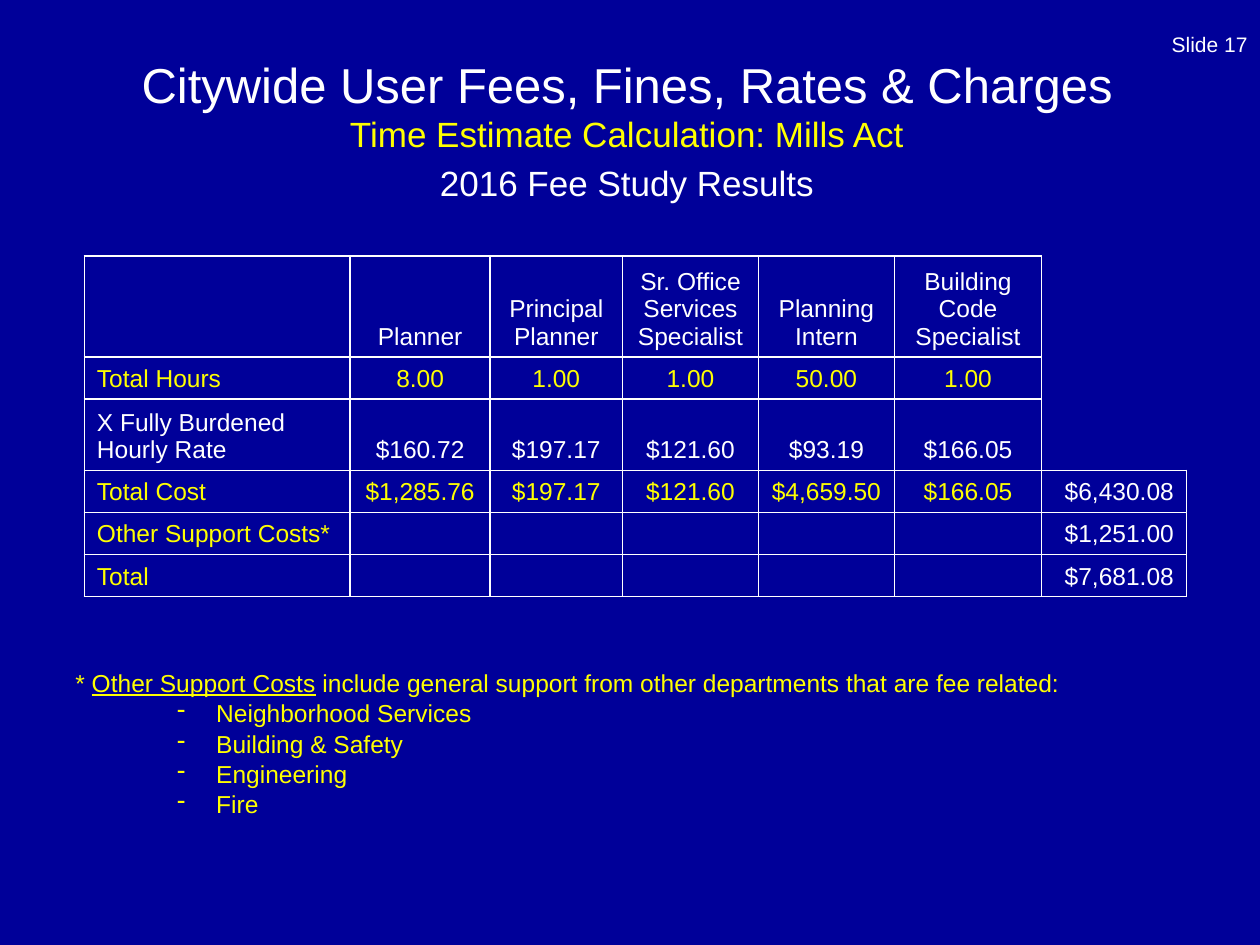
import pptx
import pptx.util
import pptx.dml.color
import pptx.enum.text
import pptx.oxml
import pptx.oxml.ns
import lxml.etree

Cm, Pt = pptx.util.Cm, pptx.util.Pt
ALIGN = pptx.enum.text.PP_ALIGN
ANCHOR = pptx.enum.text.MSO_ANCHOR
qn = pptx.oxml.ns.qn

COLORS = {"back": "000099", "white": "FFFFFF", "yellow": "FFFF00"}
FACE = "Arial"
NO_STYLE = "{2D5ABB26-0587-4C30-8999-92F81FD0307C}"

NUMBER = "Slide 17"
TITLE = "Citywide User Fees, Fines, Rates & Charges"
TOPIC = "Time Estimate Calculation: Mills Act"
STUDY = "2016 Fee Study Results"

# Row height in cm, text colour, cells
ROWS = [
    (1.93, "white", ["", "Planner", "Principal Planner",
                     "Sr. Office Services Specialist", "Planning Intern",
                     "Building Code Specialist", ""]),
    (0.84, "yellow", ["Total Hours", "8.00", "1.00", "1.00", "50.00", "1.00", ""]),
    (1.37, "white", ["X Fully Burdened Hourly Rate", "$160.72", "$197.17",
                     "$121.60", "$93.19", "$166.05", ""]),
    (0.84, "yellow", ["Total Cost", "$1,285.76", "$197.17", "$121.60",
                      "$4,659.50", "$166.05", "$6,430.08"]),
    (0.84, "yellow", ["Other Support Costs*", "", "", "", "", "", "$1,251.00"]),
    (0.84, "yellow", ["Total", "", "", "", "", "", "$7,681.08"]),
]
WIDTHS = [5.36, 2.82, 2.67, 2.74, 2.74, 2.97, 2.92]
OPEN_ROWS = 3  # rows whose last cell stays outside the grid

NOTE = [("* ", False), ("Other Support Costs", True),
        (" include general support from other departments that are fee related:", False)]
UNITS = ["Neighborhood Services", "Building & Safety", "Engineering", "Fire"]


def style(font, size, color):
    font.name = FACE
    font.size = Pt(size)
    font.color.rgb = pptx.dml.color.RGBColor.from_string(COLORS[color])


def add_box(slide, left, top, width, height):
    box = slide.shapes.add_textbox(Cm(left), Cm(top), Cm(width), Cm(height))
    box.text_frame.word_wrap = True
    return box.text_frame


def add_head(slide):
    frame = add_box(slide, 19.48, 0, 5.92, 1.27)
    frame.vertical_anchor = ANCHOR.BOTTOM
    para = frame.paragraphs[0]
    para.text = NUMBER
    para.alignment = ALIGN.RIGHT
    style(para.font, 12, "white")

    frame = add_box(slide, 0.79, 0.84, 23.7, 2.11)
    frame.margin_top = Cm(0.25)
    para = frame.paragraphs[0]
    para.alignment = ALIGN.CENTER
    run = para.add_run()
    run.text = TITLE
    style(run.font, 28, "white")
    para.add_line_break()
    run = para.add_run()
    run.text = TOPIC
    style(run.font, 20, "yellow")
    para = frame.add_paragraph()
    para.text = STUDY
    para.alignment = ALIGN.CENTER
    para.space_before = Pt(4)
    style(para.font, 20, "white")


def set_edges(cell, sides):
    """Draw a white line on the given sides (L, R, T, B) and none elsewhere."""
    props = cell._tc.get_or_add_tcPr()
    for side in "LRTB":
        line = lxml.etree.SubElement(props, qn("a:ln" + side), w=str(Pt(1)))
        if side in sides:
            fill = lxml.etree.SubElement(line, qn("a:solidFill"))
            lxml.etree.SubElement(fill, qn("a:srgbClr"), val=COLORS["white"])
        else:
            lxml.etree.SubElement(line, qn("a:noFill"))


def add_costs(slide):
    last = len(WIDTHS) - 1
    high = sum(row[0] for row in ROWS)
    table = slide.shapes.add_table(len(ROWS), len(WIDTHS), Cm(1.7), Cm(5.16),
                                   Cm(sum(WIDTHS)), Cm(high)).table
    table.first_row = table.horz_banding = False
    table._tbl.tblPr.find(qn("a:tableStyleId")).text = NO_STYLE
    for col, width in zip(table.columns, WIDTHS):
        col.width = Cm(width)
    for r, (height, color, texts) in enumerate(ROWS):
        table.rows[r].height = Cm(height)
        for c, text in enumerate(texts):
            cell = table.cell(r, c)
            sides = "LRTB"
            if c == last and r < OPEN_ROWS:
                sides = "LB" if r == OPEN_ROWS - 1 else "L"
            set_edges(cell, sides)
            cell.fill.background()
            cell.vertical_anchor = ANCHOR.BOTTOM
            para = cell.text_frame.paragraphs[0]
            if not text:  # keeps an empty row from growing
                lxml.etree.SubElement(para._p, qn("a:endParaRPr"), sz="1400")
                continue
            para.text = text
            para.alignment = {0: ALIGN.LEFT, last: ALIGN.RIGHT}.get(c, ALIGN.CENTER)
            style(para.font, 14, "white" if c == last else color)


def add_note(slide):
    frame = add_box(slide, 1.27, 13.34, 20.52, 3.25)
    para = frame.paragraphs[0]
    for text, under in NOTE:
        run = para.add_run()
        run.text = text
        if under:
            run.font.underline = True
    style(para.font, 14, "yellow")
    for unit in UNITS:
        para = frame.add_paragraph()
        para.text = unit
        para.level = 1
        para.space_before = Pt(0.5)
        props = para._p.get_or_add_pPr()
        props.set("marL", str(Cm(2.84)))
        props.set("indent", str(Cm(-0.79)))
        lxml.etree.SubElement(props, qn("a:buChar"), char="-")
        style(para.font, 14, "yellow")


def main():
    deck = pptx.Presentation()
    deck.slide_width, deck.slide_height = Cm(25.4), Cm(19.05)
    slide = deck.slides.add_slide(deck.slide_layouts[6])
    fill = slide.background.fill
    fill.solid()
    fill.fore_color.rgb = pptx.dml.color.RGBColor.from_string(COLORS["back"])
    add_head(slide)
    add_costs(slide)
    add_note(slide)
    deck.save("out.pptx")


if __name__ == "__main__":
    main()
